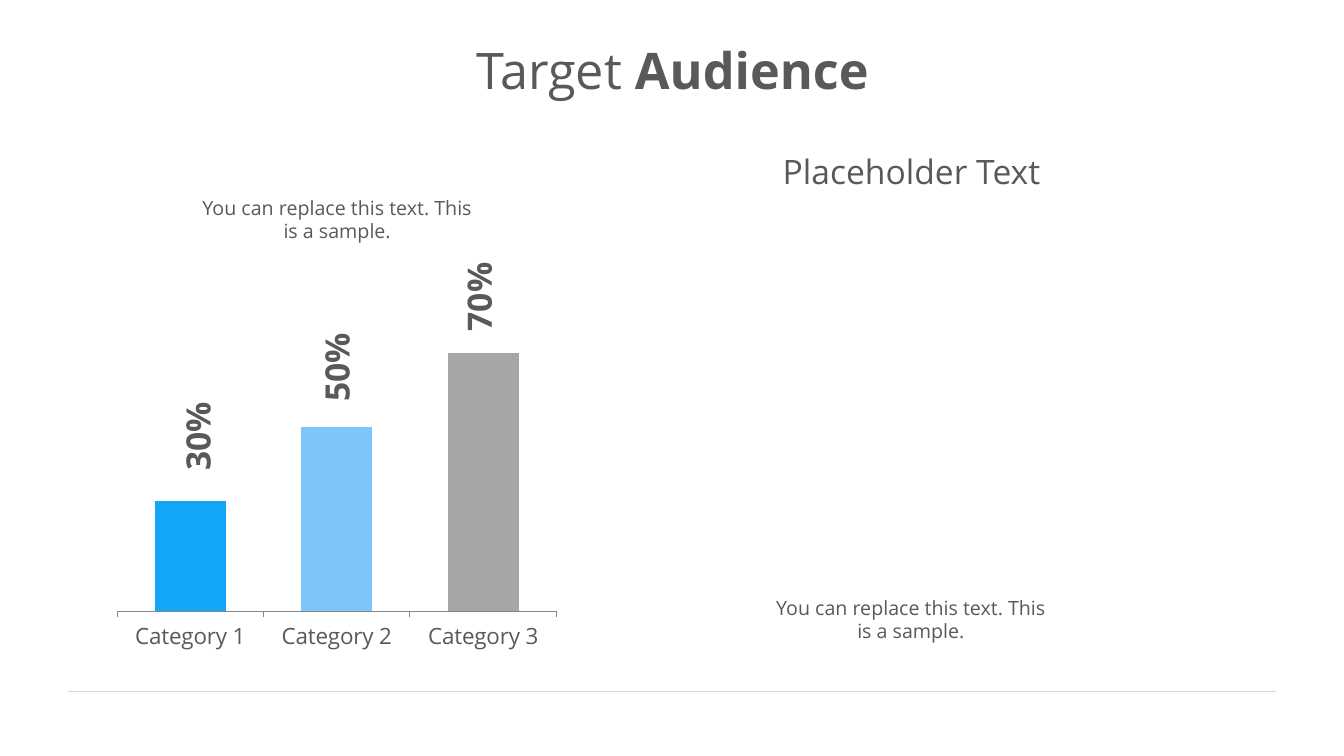
from lxml import etree
from pptx import Presentation
from pptx.chart.data import CategoryChartData
from pptx.dml.color import RGBColor
from pptx.enum.chart import XL_CHART_TYPE, XL_TICK_LABEL_POSITION, XL_TICK_MARK
from pptx.enum.shapes import MSO_CONNECTOR
from pptx.enum.text import MSO_ANCHOR, MSO_AUTO_SIZE, PP_ALIGN
from pptx.oxml.ns import qn
from pptx.util import Pt

STACKED = XL_CHART_TYPE.COLUMN_STACKED_100
TICK_OUT = XL_TICK_MARK.OUTSIDE
LABELS_LOW = XL_TICK_LABEL_POSITION.LOW
STRAIGHT = MSO_CONNECTOR.STRAIGHT
TOP, MIDDLE = MSO_ANCHOR.TOP, MSO_ANCHOR.MIDDLE
FIXED = MSO_AUTO_SIZE.NONE
LEFT, CENTER = PP_ALIGN.LEFT, PP_ALIGN.CENTER

TEXT = RGBColor(0x59, 0x59, 0x59)
RULE = RGBColor(0xD8, 0xD8, 0xD8)
AXIS = RGBColor(0x86, 0x86, 0x86)
BLUE = RGBColor(0x12, 0xA6, 0xF8)
LIGHT_BLUE = RGBColor(0x7D, 0xC5, 0xFB)
GRAY = RGBColor(0xA6, 0xA6, 0xA6)
FONT = "Open Sans"
SAMPLE = "You can replace this text. This is a sample."
PX = 9144


def add_span(para, text, size, bold=False):
    span = para.add_run()
    span.text = text
    span.font.name = FONT
    span.font.size = Pt(size)
    span.font.bold = bold
    span.font.color.rgb = TEXT


def add_label(page, place, text, size, align=CENTER, anchor=TOP, bold=False):
    box = page.shapes.add_textbox(*[value * PX for value in place])
    box.text_frame.word_wrap = True
    box.text_frame.auto_size = FIXED
    box.text_frame.vertical_anchor = anchor
    para = box.text_frame.paragraphs[0]
    para.alignment = align
    add_span(para, text, size, bold)
    return box


deck = Presentation()
deck.slide_width = 1333 * PX
deck.slide_height = 750 * PX
page = deck.slides.add_slide(deck.slide_layouts[5])

footer_rule = page.shapes.add_connector(STRAIGHT, 67 * PX, 686 * PX, 1266 * PX, 686 * PX)
footer_rule.line.color.rgb = RULE
footer_rule.line.width = Pt(0.75)
etree.SubElement(footer_rule._element.spPr, qn("a:effectLst"))

title = page.shapes.title
title.left, title.top, title.width, title.height = 67 * PX, 30 * PX, 1200 * PX, 78 * PX
frame = title.text_frame
frame.auto_size = FIXED
frame.word_wrap = True
frame.vertical_anchor = MIDDLE
frame.margin_left = frame.margin_right = 13 * PX
frame.margin_top = frame.margin_bottom = 7 * PX
para = frame.paragraphs[0]
para.alignment = CENTER
add_span(para, "Target", 36)
add_span(para, " Audience", 36, True)

add_label(page, (755, 586, 297, 57), SAMPLE, 14)
add_label(page, (574, 145, 660, 50), "Placeholder Text", 24)

shares = [30, 50, 70]
data = CategoryChartData()
data.categories = ["Category 1", "Category 2", "Category 3"]
data.add_series("Series 1", shares)
data.add_series("Series 2", [100 - share for share in shares])
chart = page.shapes.add_chart(STACKED, 107 * PX, 232 * PX, 454 * PX, 422 * PX, data).chart
chart.has_title = False
chart.has_legend = False
chart.font.name = "Arial"
chart.font.size = Pt(18)

plot = chart.plots[0]
plot.gap_width = 107
plot.overlap = 100
plot.vary_by_categories = False
share_series, rest_series = plot.series
share_series.format.fill.solid()
share_series.format.fill.fore_color.rgb = GRAY
rest_series.format.fill.background()
for index, color in enumerate([BLUE, LIGHT_BLUE]):
    fill = share_series.points[index].format.fill
    fill.solid()
    fill.fore_color.rgb = color

chart.value_axis.visible = False
chart.value_axis.has_major_gridlines = False
category_axis = chart.category_axis
category_axis.major_tick_mark = TICK_OUT
category_axis.tick_label_position = LABELS_LOW
category_axis.format.line.color.rgb = AXIS
category_axis.format.line.width = Pt(0.75)
labels_font = category_axis.tick_labels.font
labels_font.name = FONT
labels_font.size = Pt(16)
labels_font.color.rgb = TEXT

for share, left, top in zip(shares, [151, 289, 430], [407, 339, 269]):
    box = add_label(page, (left, top, 89, 50), f"{share}%", 24, LEFT, MIDDLE, True)
    box.rotation = 270

add_label(page, (186, 189, 297, 57), SAMPLE, 14)

deck.save("out.pptx")
